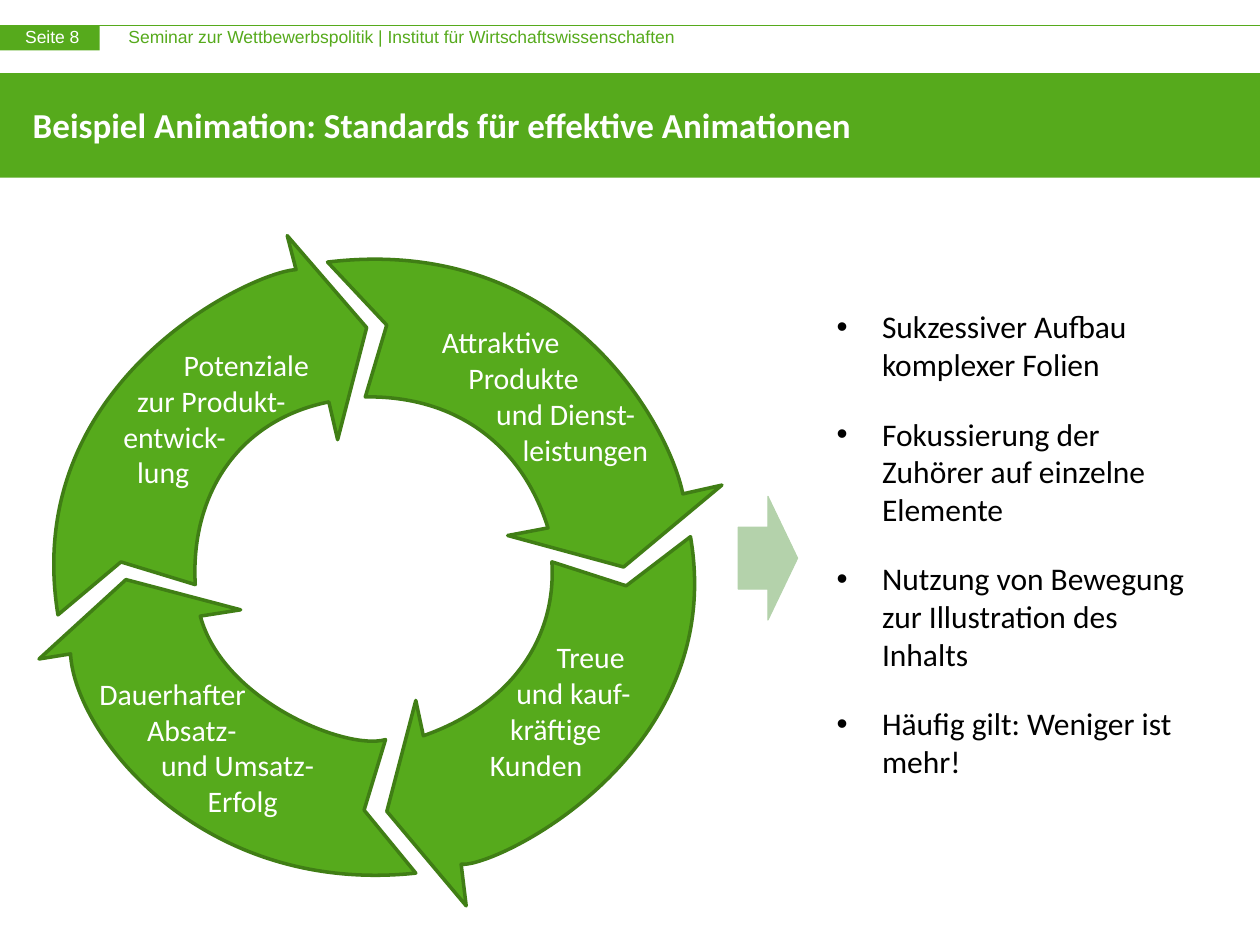
from lxml import etree
from pptx import Presentation
from pptx import util as u
from pptx.dml.color import RGBColor
from pptx.enum import shapes, text
from pptx.oxml import ns

GREEN = RGBColor(0x56, 0xAA, 0x1C)
DARK_GREEN = RGBColor(0x40, 0x7E, 0x15)
PALE_GREEN = RGBColor(0xB4, 0xD2, 0xAB)
WHITE = RGBColor(0xFF, 0xFF, 0xFF)
BLACK = RGBColor(0, 0, 0)


def add_filled_shape(kind, box, color):
    shape = slide.shapes.add_shape(kind, *map(u.Inches, box))
    shape.shadow.inherit = False
    shape.fill.solid()
    shape.fill.fore_color.rgb = color
    shape.line.color.rgb = color
    shape.line.width = u.Pt(0.75)
    return shape


def style(paragraph, name, size, color):
    paragraph.alignment = text.PP_ALIGN.LEFT
    for run in paragraph.runs:
        run.font.name = name
        run.font.size = u.Pt(size)
        run.font.color.rgb = color


presentation = Presentation()
presentation.slide_width = u.Inches(10)
presentation.slide_height = u.Inches(7.5)
slide = presentation.slides.add_slide(presentation.slide_layouts[1])
title, body = slide.placeholders

header_line = slide.shapes.add_connector(
    shapes.MSO_CONNECTOR.STRAIGHT, 0, u.Inches(0.2), u.Inches(10), u.Inches(0.2))
header_line.line.color.rgb = GREEN
header_line.line.width = u.Pt(0.75)
etree.SubElement(header_line._element.spPr, ns.qn("a:effectLst"))

page_tab = add_filled_shape(shapes.MSO_SHAPE.RECTANGLE, (0, 0.2, 0.79, 0.2), GREEN)
title_band = add_filled_shape(shapes.MSO_SHAPE.RECTANGLE, (0, 0.58, 10, 0.83), GREEN)
for backdrop in (page_tab, title_band):
    backdrop.line.fill.background()
title._element.addprevious(title_band._element)

for left, width, wording, color in (
    (1.02, 6.56, "Seminar zur Wettbewerbspolitik | Institut für Wirtschaftswissenschaften", GREEN),
    (0.2, 0.62, "Seite 8", WHITE),
):
    label = slide.shapes.add_textbox(*map(u.Inches, (left, 0.21, width, 0.17)))
    frame = label.text_frame
    frame.margin_left = frame.margin_right = frame.margin_top = frame.margin_bottom = 0
    frame.word_wrap = True
    frame.text = wording
    style(frame.paragraphs[0], "Arial", 10, color)

title.left, title.top, title.width, title.height = map(u.Inches, (0.16, 0.63, 9.84, 0.72))
title.text_frame.text = "Beispiel Animation: Standards für effektive Animationen"
title.text_frame.auto_size = text.MSO_AUTO_SIZE.NONE
title.text_frame.vertical_anchor = text.MSO_ANCHOR.MIDDLE
heading = title.text_frame.paragraphs[0]
heading.line_spacing = u.Pt(24)
style(heading, "Calibri", 20, WHITE)
heading.runs[0].font.bold = True

# two numbers are a corner, six are a Bézier curve
cycle = [
    ([(2.6, 2.08), (3.07, 2.58), (2.9, 3.15), (3.61, 3.14, 4.14, 3.52, 4.35, 4.19),
      (4.03, 4.25), (4.95, 4.5), (5.73, 3.85), (5.42, 3.92),
      (5.32, 3.41, 4.52, 1.85, 2.6, 2.08)],
     (3.36, 2.52, 2.74, 1.24),
     [("Attraktive", 0.05), ("Produkte", 0.26), ("und Dienst-", 0.48), ("leistungen", 0.69)]),
    ([(5.48, 4.26), (4.97, 4.65), (4.38, 4.46), (4.42, 5.1, 4.02, 5.61, 3.36, 5.84),
      (3.3, 5.56), (3.07, 6.44), (3.7, 7.19), (3.66, 6.86),
      (3.93, 6.89, 5.78, 5.99, 5.48, 4.26)],
     (3.79, 5.02, 1.83, 1.24),
     [("Treue", 0.53), ("und kauf-", 0.21), ("kräftige", 0.16), ("Kunden", 0)]),
    ([(3.3, 6.93), (2.89, 6.43), (3.06, 5.87), (2.75, 5.96, 1.77, 5.56, 1.59, 4.89),
      (1.91, 4.84), (1, 4.6), (0.31, 5.23), (0.56, 5.19),
      (0.59, 5.82, 1.59, 7.11, 3.3, 6.93)],
     (0.65, 5.31, 2.5, 1.24),
     [("Dauerhafter", 0.04), ("Absatz-", 0.42), ("und Umsatz-", 0.53), ("Erfolg", 0.9)]),
    ([(0.46, 4.88), (0.96, 4.46), (1.55, 4.64), (1.51, 3.95, 1.87, 3.34, 2.61, 3.19),
      (2.68, 3.49), (2.91, 2.6), (2.28, 1.87), (2.35, 2.14),
      (1.99, 2.16, 0.16, 3.03, 0.46, 4.88)],
     (0.83, 2.7, 2.52, 1.24),
     [("Potenziale", 0.53), ("zur Produkt-", 0.16), ("entwick-", 0.05), ("lung", 0.16)]),
]
for outline, label_box, lines in cycle:
    points = [tuple(map(u.Inches, segment[start:start + 2]))
              for segment in outline for start in range(0, len(segment), 2)]
    group = slide.shapes.add_group_shape()
    builder = group.shapes.build_freeform(*points[0])
    builder.add_line_segments(points[1:], close=False)
    arrow = builder.convert_to_shape()
    corners = list(arrow._element.iter(ns.qn("a:lnTo")))
    contour = corners[0].getparent()
    for segment in outline[1:]:
        corner = corners.pop(0)
        if len(segment) == 6:
            curve = etree.Element(ns.qn("a:cubicBezTo"))
            corner.addprevious(curve)
            for control in (corner, corners.pop(0), corners.pop(0)):
                curve.append(control[0])
                contour.remove(control)
    etree.SubElement(contour, ns.qn("a:close"))
    arrow.shadow.inherit = False
    arrow.fill.solid()
    arrow.fill.fore_color.rgb = GREEN
    arrow.line.color.rgb = DARK_GREEN
    arrow.line.width = u.Pt(2)
    etree.SubElement(arrow._element.spPr.find(ns.qn("a:ln")), ns.qn("a:round"))

    label = group.shapes.add_textbox(*map(u.Inches, label_box))
    frame = label.text_frame
    frame.word_wrap = True
    frame.vertical_anchor = text.MSO_ANCHOR.MIDDLE
    frame.text = "\n".join(wording for wording, indent in lines)
    for paragraph, (wording, indent) in zip(frame.paragraphs, lines):
        paragraph._p.get_or_add_pPr().set("marL", str(u.Inches(indent)))
        style(paragraph, "Calibri", 17, WHITE)

body.left, body.top, body.width, body.height = map(u.Inches, (6.59, 2.44, 3.02, 3.98))
frame = body.text_frame
frame.auto_size = text.MSO_AUTO_SIZE.NONE
frame.margin_left = frame.margin_right = frame.margin_bottom = u.Inches(0.05)
frame.margin_top = 0
frame.text = "\n".join((
    "Sukzessiver Aufbau komplexer Folien",
    "Fokussierung der Zuhörer auf einzelne Elemente",
    "Nutzung von Bewegung zur Illustration des Inhalts",
    "Häufig gilt: Weniger ist mehr!",
))
for index, paragraph in enumerate(frame.paragraphs):
    properties = paragraph._p.get_or_add_pPr()
    properties.set("marL", str(u.Inches(0.36)))
    properties.set("indent", str(u.Inches(-0.36)))
    bullet_color = etree.SubElement(properties, ns.qn("a:buClr"))
    etree.SubElement(bullet_color, ns.qn("a:srgbClr"), val=str(BLACK))
    etree.SubElement(properties, ns.qn("a:buChar"), char="•")
    paragraph.space_before = u.Pt(18 if index else 0)
    style(paragraph, "Calibri", 18, BLACK)

add_filled_shape(shapes.MSO_SHAPE.RIGHT_ARROW, (5.86, 3.94, 0.47, 0.98), PALE_GREEN)

presentation.save("out.pptx")
